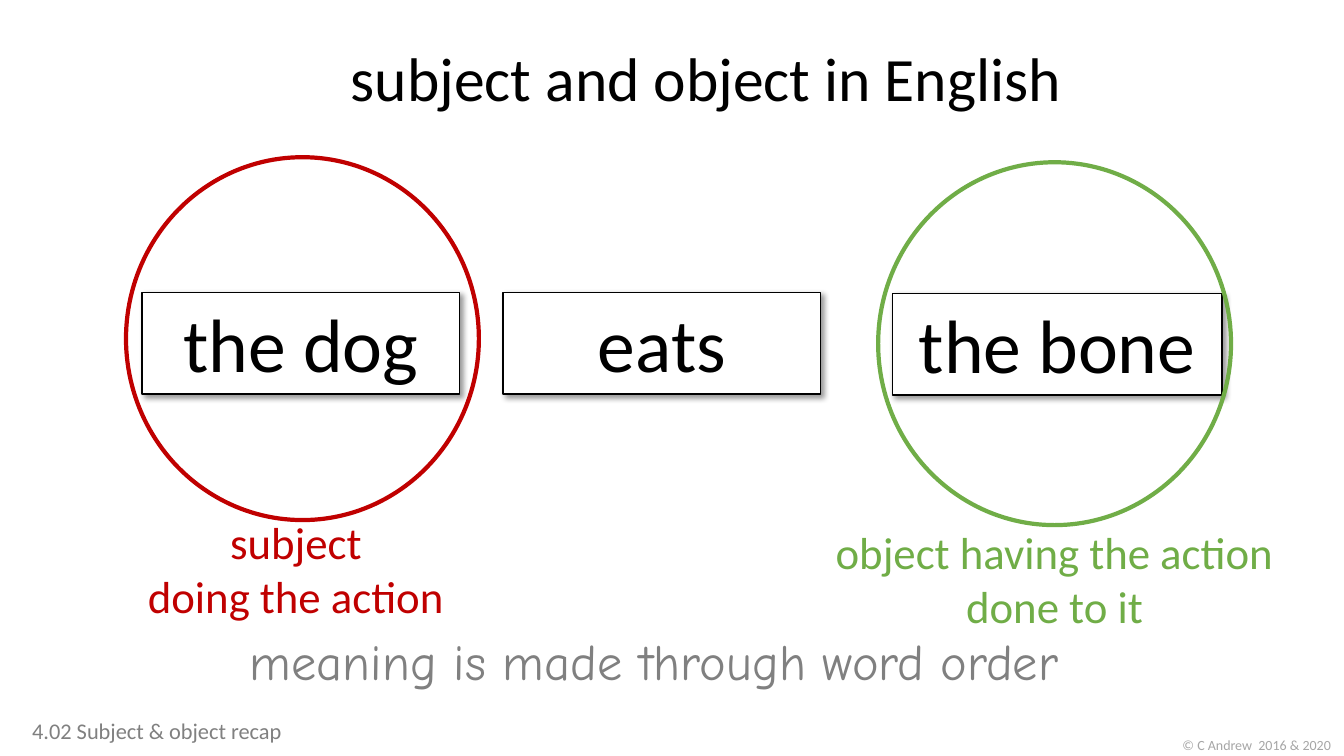
from dataclasses import dataclass

from lxml.etree import SubElement as Sub
from pptx import Presentation
from pptx.dml.color import RGBColor as Rgb
from pptx.enum.shapes import MSO_SHAPE as Kind
from pptx.enum.text import MSO_ANCHOR as Anchor, MSO_AUTO_SIZE as Fit, PP_ALIGN as Align
from pptx.oxml.ns import qn
from pptx.util import Emu, Pt

PX = 9144


@dataclass(frozen=True)
class Theme:
    """Fonts, colours and type sizes of the slide."""
    font: str = "Calibri"
    hand: str = "Comic Neue"
    ink: str = "000000"
    paper: str = "FFFFFF"
    red: str = "C00000"
    green: str = "70AD47"
    gray: str = "808080"
    pale: str = "A6A6A6"
    head: int = 44
    word: int = 54
    role: int = 32
    moral: int = 36
    foot: int = 16
    small: int = 10


LOOK = Theme()


def scale(*spans):
    """Turn px lengths into EMU."""
    return [Emu(span * PX) for span in spans]


def write(frame, text, size, color=LOOK.ink, font=LOOK.font, align=Align.LEFT,
          anchor=Anchor.TOP, wrap=True, fit=Fit.SHAPE_TO_FIT_TEXT, lead=None):
    """Fill a text frame, one paragraph per line of text."""
    frame.text = text
    frame.word_wrap = wrap
    frame.auto_size = fit
    frame.vertical_anchor = anchor
    for para in frame.paragraphs:
        para.alignment = align
        para.line_spacing = lead
        for run in para.runs:
            run.font.name = font
            run.font.size = Pt(size)
            run.font.color.rgb = Rgb.from_string(color)


def label(slide, box, text, size, **form):
    """Add a text box."""
    write(slide.shapes.add_textbox(*scale(*box)).text_frame, text, size, **form)


def shade(shape):
    """Give a shape a soft shadow to the lower right."""
    shape.shadow.inherit = False
    effects = shape._element.spPr.find(qn("a:effectLst"))
    outer = Sub(effects, qn("a:outerShdw"), blurRad=str(Pt(4)), dist=str(Pt(3)),
                dir="2700000", algn="tl", rotWithShape="0")
    black = Sub(outer, qn("a:srgbClr"), val=LOOK.ink)
    Sub(black, qn("a:alpha"), val="40000")


def card(slide, box, text):
    """Add a word card with a shadow."""
    shape = slide.shapes.add_shape(Kind.RECTANGLE, *scale(*box))
    shape.fill.solid()
    shape.fill.fore_color.rgb = Rgb.from_string(LOOK.paper)
    shape.line.color.rgb = Rgb.from_string(LOOK.ink)
    shape.line.width = Pt(1)
    shade(shape)
    write(shape.text_frame, text, LOOK.word, align=Align.CENTER)


def ring(slide, left, top, color):
    """Add an open ring around a word card."""
    shape = slide.shapes.add_shape(Kind.OVAL, *scale(left, top, 350, 360))
    shape.shadow.inherit = False
    shape.fill.background()
    shape.line.color.rgb = Rgb.from_string(color)
    shape.line.width = Pt(3)


def title(slide, box, text):
    """Place and fill the title."""
    head = slide.shapes.title
    head.left, head.top, head.width, head.height = scale(*box)
    write(head.text_frame, text, LOOK.head, anchor=Anchor.MIDDLE, fit=Fit.NONE, lead=0.9)


def main():
    """Build the slide and save it."""
    deck = Presentation()
    deck.slide_width, deck.slide_height = scale(1333, 750)
    slide = deck.slides.add_slide(deck.slide_layouts[5])

    label(slide, (1163, 726, 170, 27), "© C Andrew  2016 & 2020", LOOK.small,
          color=LOOK.pale, wrap=False)
    title(slide, (338, 23, 777, 116), "subject and object in English")

    card(slide, (141, 290, 315, 101), "the dog")
    card(slide, (499, 290, 315, 101), "eats")
    card(slide, (885, 291, 327, 101), "the bone")

    label(slide, (22, 710, 628, 40), "4.02 Subject & object recap", LOOK.foot,
          color=LOOK.gray, fit=Fit.NONE, lead=0.9)
    label(slide, (135, 506, 317, 118), "subject\ndoing the action", LOOK.role,
          color=LOOK.red, align=Align.CENTER, wrap=False)
    ring(slide, 125, 156, LOOK.red)
    label(slide, (796, 516, 500, 118), "object having the action done to it", LOOK.role,
          color=LOOK.green, align=Align.CENTER)
    ring(slide, 871, 161, LOOK.green)
    label(slide, (238, 620, 876, 71), "meaning is made through word order", LOOK.moral,
          color=LOOK.gray, font=LOOK.hand, wrap=False)

    deck.save("out.pptx")


if __name__ == "__main__":
    main()
